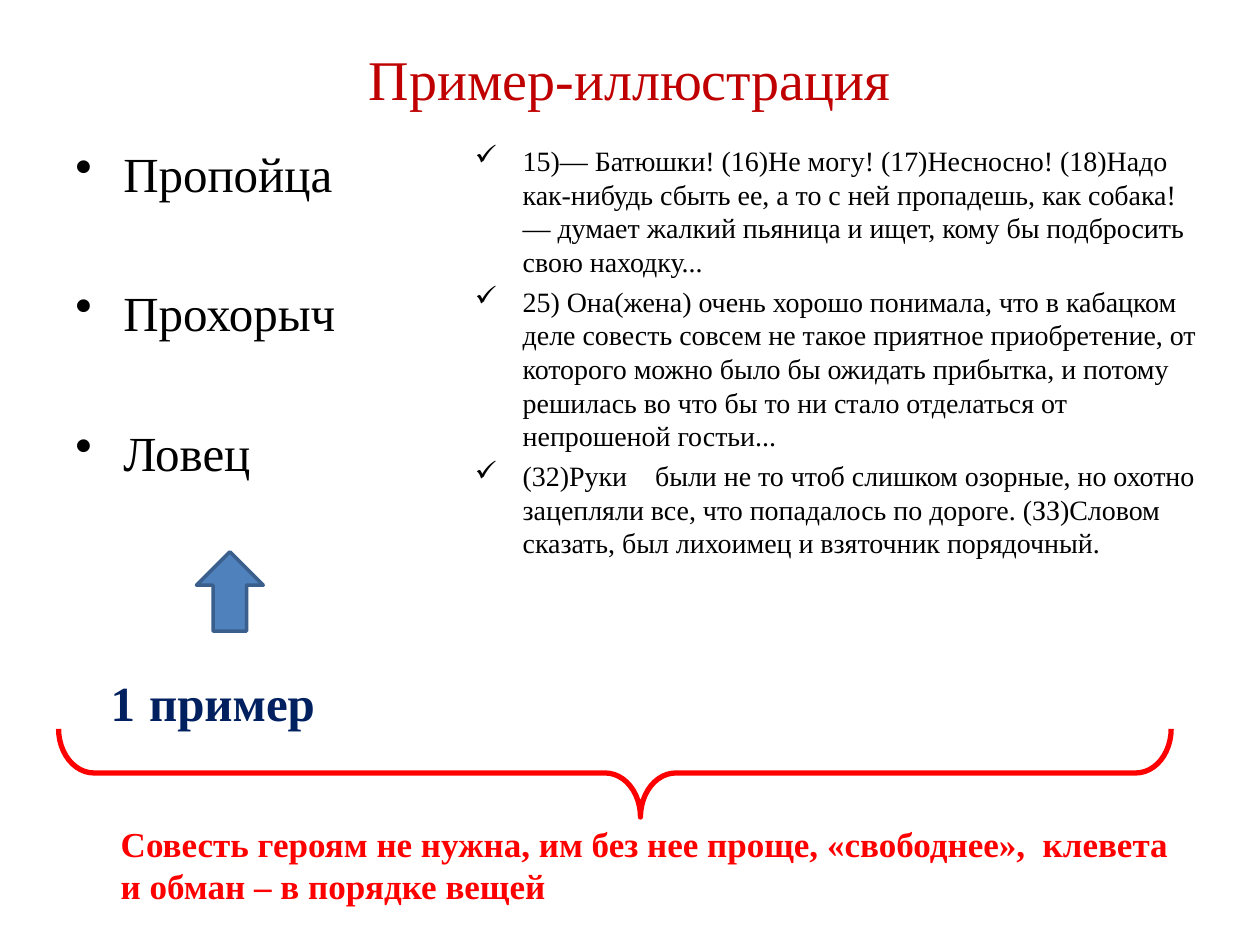
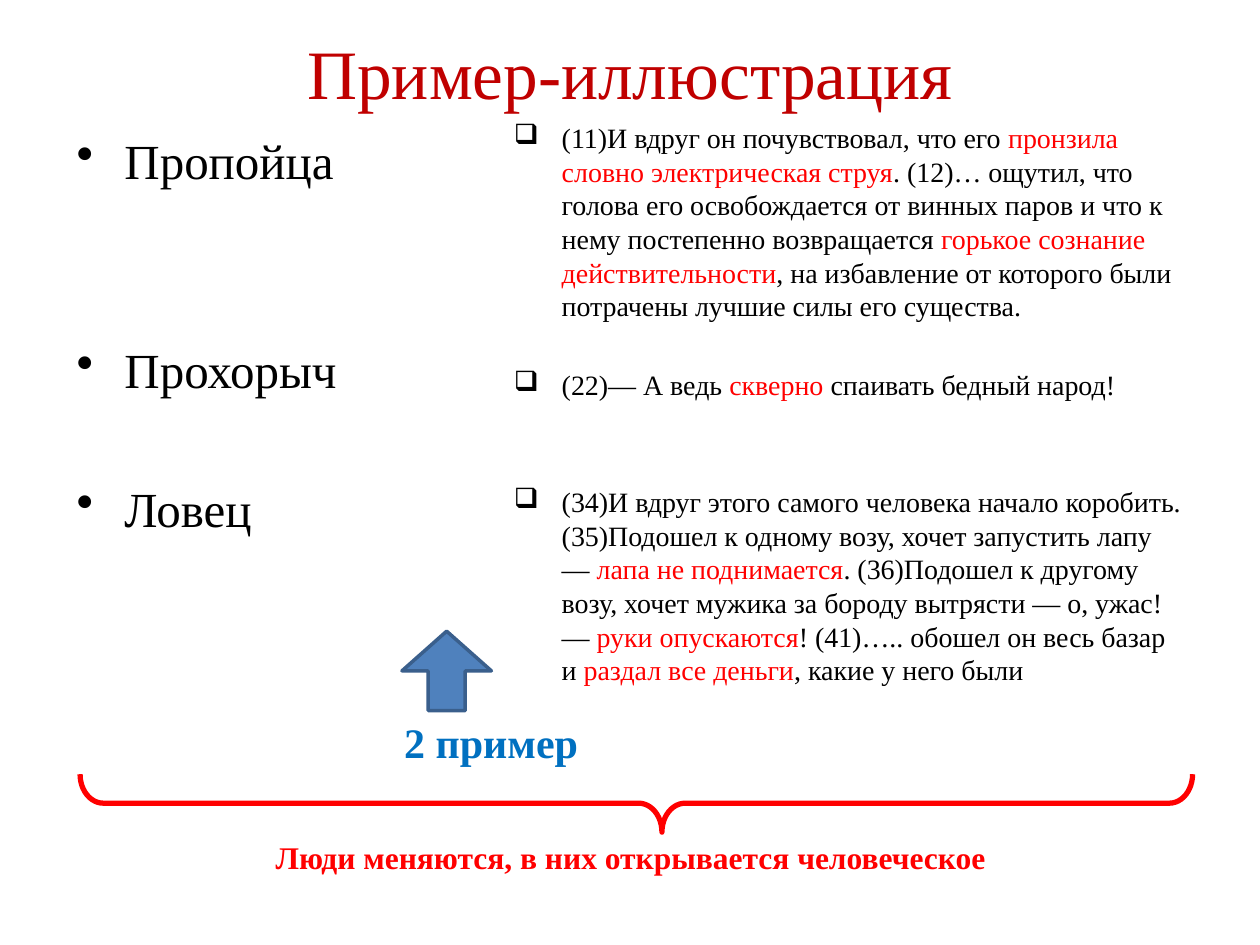
from dataclasses import dataclass

from lxml import etree
from pptx import Presentation
from pptx import util as u
from pptx.dml.color import RGBColor
from pptx.enum import shapes, text
from pptx.oxml import ns

FONT = "Times New Roman"
HUES = {
    "title": "C00000", "text": "000000", "red": "FF0000", "arrow": "4F81BD",
    "edge": "3A5F8C", "navy": "002060", "blue": "0070C0",
}
HEROES = ("Пропойца", "Прохорыч", "Ловец")
Box = tuple[float, float, float, float]


@dataclass
class Bullets:
    box: Box
    mark: str
    size: float
    items: tuple[str, ...]  # words between asterisks are red
    gaps: tuple[float, ...]  # points above each item


@dataclass
class Label:
    box: Box
    words: tuple[str, ...]
    sizes: tuple[float, ...]
    hue: str


@dataclass
class Page:
    title: Box
    size: float
    lists: tuple[Bullets, Bullets]
    arrow: Box
    head: float
    brace: Box
    labels: tuple[Label, Label]


PAGES = (
    Page(
        title=(0.5, 0.3, 9, 0.64), size=32,
        lists=(
            Bullets((0.5, 1.09, 4.42, 5.61), "•", 28, HEROES, (0, 46, 46)),
            Bullets((3.67, 1.09, 6.02, 4.45), "✓", 16, (
                "15)— Батюшки! (16)Не могу! (17)Несносно! (18)Надо как-нибудь "
                "сбыть ее, а то с ней пропадешь, как собака! — думает жалкий "
                "пьяница и ищет, кому бы подбросить свою находку...",
                "25) Она(жена) очень хорошо понимала, что в кабацком деле "
                "совесть совсем не такое приятное приобретение, от которого "
                "можно было бы ожидать прибытка, и потому решилась во что бы "
                "то ни стало отделаться от непрошеной гостьи...",
                "(32)Руки    были не то чтоб слишком озорные, но охотно "
                "зацепляли все, что попадалось по дороге. (ЗЗ)Словом сказать, "
                "был лихоимец и взяточник порядочный.",
            ), (0, 3.7, 3.7)),
        ),
        arrow=(1.56, 4.38, 0.53, 0.63), head=0.5,
        brace=(4.53, 1.72, 0.7, 8.83),
        labels=(
            Label((0.78, 5.23, 2.27, 0.64), ("1", " ", "пример"), (28, 32, 28), "navy"),
            Label((0.86, 6.48, 8.52, 0.77), (
                "Совесть героям не нужна, им без нее проще, «свободнее»,  "
                "клевета и обман – в порядке вещей",), (20,), "red"),
        ),
    ),
    Page(
        title=(0.5, 0.3, 9, 0.54), size=39.6,
        lists=(
            Bullets((0.51, 0.99, 2.53, 4.77), "•", 28, HEROES, (0, 85.5, 46)),
            Bullets((3.98, 0.91, 5.52, 4.57), "❑", 16, (
                "(11)И вдруг он почувствовал, что его *пронзила словно "
                "электрическая струя*. (12)… ощутил, что голова его "
                "освобождается от винных паров и что к нему постепенно "
                "возвращается *горькое сознание действительности*, на "
                "избавление от которого были потрачены лучшие силы его существа.",
                "(22)— А ведь *скверно *спаивать бедный народ!",
                "(34)И вдруг этого самого человека начало коробить. "
                "(35)Подошел к одному возу, хочет запустить лапу — *лапа не "
                "поднимается*. (36)Подошел к другому возу, хочет мужика за "
                "бороду вытрясти — о, ужас! — *руки опускаются*! (41)….. обошел "
                "он весь базар и *раздал все деньги*, какие у него были",
            ), (0, 26, 47.7)),
        ),
        arrow=(3.19, 5.01, 0.71, 0.63), head=0.415,
        brace=(4.82, 1.96, 0.46, 8.83),
        labels=(
            Label((3.11, 5.64, 1.94, 0.5), ("2 пример",), (24,), "blue"),
            Label((2.09, 6.6, 6.54, 0.4),
                  ("Люди меняются, в них открывается человеческое",), (18,), "red"),
        ),
    ),
)


def tint(name: str) -> RGBColor:
    return RGBColor.from_string(HUES[name])


def inches(box: Box) -> list[u.Length]:
    return [u.Inches(side) for side in box]


def style(run, size: float, hue: str, bold: bool = False) -> None:
    font = run.font
    font.name, font.size, font.bold = FONT, u.Pt(size), bold
    font.color.rgb = tint(hue)


def add_text(slide, box: Box):
    frame = slide.shapes.add_textbox(*inches(box)).text_frame
    frame.word_wrap = True
    return frame


def add_title(slide, page: Page) -> None:
    title = slide.shapes.title
    title.left, title.top, title.width, title.height = inches(page.title)
    frame = title.text_frame
    frame.text = "Пример-иллюстрация"
    frame.auto_size = text.MSO_AUTO_SIZE.NONE
    frame.vertical_anchor = text.MSO_ANCHOR.MIDDLE
    para = frame.paragraphs[0]
    para.alignment = text.PP_ALIGN.CENTER
    style(para.runs[0], page.size, "title")


def add_list(slide, block: Bullets) -> None:
    frame = add_text(slide, block.box)
    for i, (item, gap) in enumerate(zip(block.items, block.gaps)):
        para = frame.add_paragraph() if i else frame.paragraphs[0]
        para.space_before = u.Pt(gap)
        props = para._p.get_or_add_pPr()
        props.set("marL", str(u.Inches(0.38)))
        props.set("indent", str(-u.Inches(0.38)))
        etree.SubElement(props, ns.qn("a:buChar")).set("char", block.mark)
        for j, piece in enumerate(item.split("*")):
            run = para.add_run()
            run.text = piece
            style(run, block.size, "red" if j % 2 else "text")


def add_label(slide, label: Label) -> None:
    para = add_text(slide, label.box).paragraphs[0]
    for word, size in zip(label.words, label.sizes):
        run = para.add_run()
        run.text = word
        style(run, size, label.hue, bold=True)


def add_form(slide, kind, box: Box, hue: str, width: float):
    form = slide.shapes.add_shape(kind, *inches(box))
    form.shadow.inherit = False
    form.line.color.rgb = tint(hue)
    form.line.width = u.Pt(width)
    return form


def add_arrow(slide, page: Page) -> None:
    arrow = add_form(slide, shapes.MSO_SHAPE.UP_ARROW, page.arrow, "edge", 2)
    arrow.fill.solid()
    arrow.fill.fore_color.rgb = tint("arrow")
    arrow.adjustments[0], arrow.adjustments[1] = page.head, 0.5


def add_brace(slide, page: Page) -> None:
    brace = add_form(slide, shapes.MSO_SHAPE.RIGHT_BRACE, page.brace, "red", 3)
    brace.fill.background()
    brace.rotation = 90
    brace.adjustments[0], brace.adjustments[1] = 0.401, 0.477


def main() -> None:
    deck = Presentation()
    deck.slide_width, deck.slide_height = u.Inches(10), u.Inches(7.5)
    for page in PAGES:
        slide = deck.slides.add_slide(deck.slide_layouts[5])
        add_title(slide, page)
        for block in page.lists:
            add_list(slide, block)
        add_arrow(slide, page)
        add_brace(slide, page)
        for label in page.labels:
            add_label(slide, label)
    deck.save("out.pptx")


if __name__ == "__main__":
    main()
